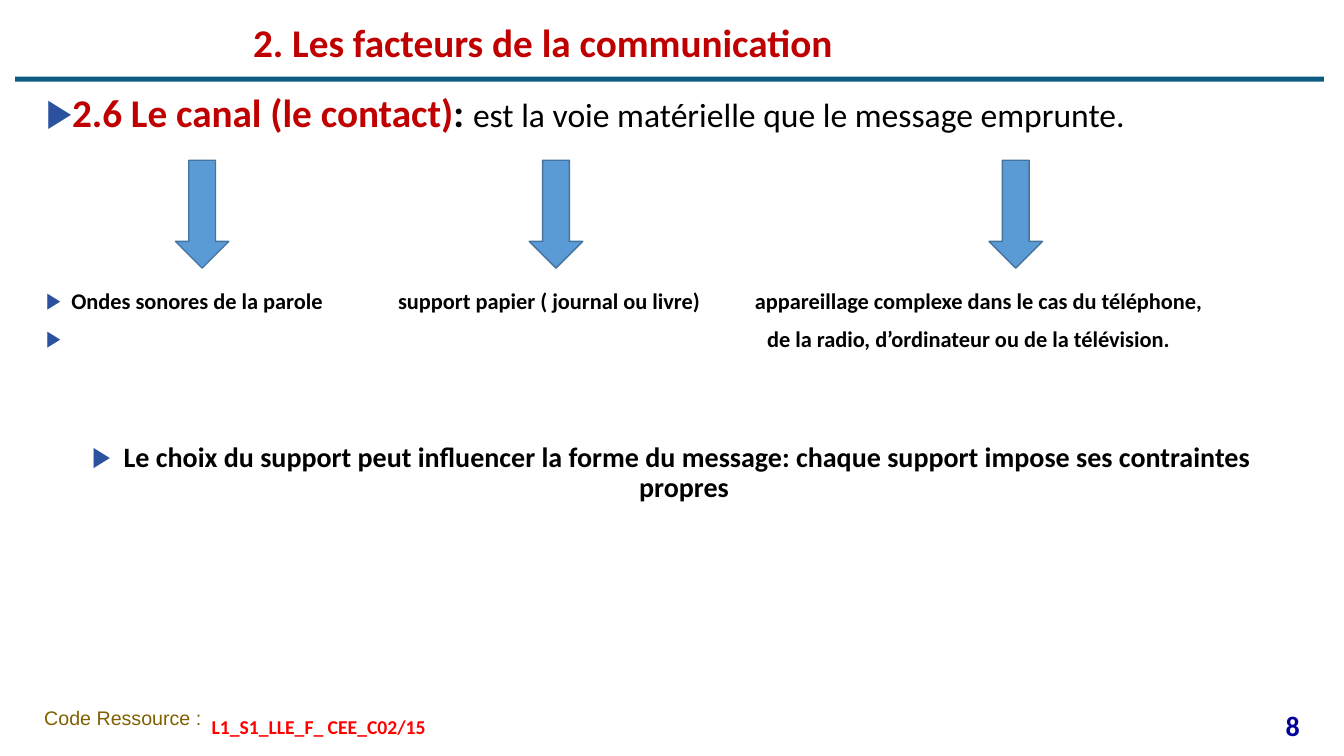
from dataclasses import dataclass

from lxml import etree
from pptx import Presentation
from pptx.dml.color import RGBColor
from pptx.enum.shapes import MSO_SHAPE as SHAPE
from pptx.enum.text import MSO_ANCHOR as ANCHOR, PP_ALIGN as ALIGN
from pptx.oxml.ns import qn
from pptx.util import Inches, Pt


@dataclass(frozen=True)
class Theme:
    font: str = "Calibri"
    label_font: str = "Arial"
    rule: str = "0C5C81"
    heading: str = "C00000"
    text: str = "000000"
    bullet: str = "2B519F"
    arrow: str = "5B9BD5"
    arrow_line: str = "43739E"
    label: str = "806000"
    code: str = "FF0000"
    number: str = "000099"
    title_size: int = 28
    lead_size: int = 24
    remark_size: int = 20
    media_size: int = 16
    footer_size: int = 14


def add_run(p, text, size, color, bold=True, font=Theme.font):
    r = p.add_run()
    r.text = text
    r.font.name = font
    r.font.size = Pt(size)
    r.font.bold = bold
    r.font.color.rgb = RGBColor.from_string(color)
    return r


class SlideBuilder:
    def __init__(self, prs, theme):
        self.theme = theme
        self.slide = prs.slides.add_slide(prs.slide_layouts[5])

    def frame(self, sp, anchor):
        tf = sp.text_frame
        tf.word_wrap = True
        tf.vertical_anchor = anchor
        return tf

    def title(self, text, x, y, w, h, indent):
        sp = self.slide.shapes.title
        sp.left, sp.top, sp.width, sp.height = map(Inches, (x, y, w, h))
        tf = self.frame(sp, ANCHOR.MIDDLE)
        tf.margin_left = Inches(indent)
        p = tf.paragraphs[0]
        p.alignment = ALIGN.LEFT
        p.line_spacing = 0.9
        add_run(p, text, self.theme.title_size, self.theme.heading)

    def text_box(self, x, y, w, h, anchor=ANCHOR.MIDDLE):
        sp = self.slide.shapes.add_textbox(*map(Inches, (x, y, w, h)))
        return self.frame(sp, anchor)

    def label(self, text, x, y, w, h, align=ALIGN.LEFT, **fmt):
        p = self.text_box(x, y, w, h).paragraphs[0]
        p.alignment = align
        add_run(p, text, **fmt)

    def shape(self, kind, x, y, w, h, fill, line=None):
        sp = self.slide.shapes.add_shape(kind, *map(Inches, (x, y, w, h)))
        sp.shadow.inherit = False
        sp.fill.solid()
        sp.fill.fore_color.rgb = RGBColor.from_string(fill)
        if line:
            sp.line.color.rgb = RGBColor.from_string(line)
            sp.line.width = Pt(1)
        else:
            sp.line.fill.background()

    def bullet(self, p, before=10, hang=0.25, tabs=()):
        p.line_spacing = 0.9
        p.space_before = Pt(before)
        pPr = p._p.get_or_add_pPr()
        pPr.set("marL", str(Inches(hang)))
        pPr.set("indent", str(-Inches(hang)))
        color = etree.SubElement(pPr, qn("a:buClr"))
        etree.SubElement(color, qn("a:srgbClr"), val=self.theme.bullet)
        etree.SubElement(pPr, qn("a:buFont"), typeface="Arial")
        etree.SubElement(pPr, qn("a:buChar"), char="▶")
        if tabs:
            stops = etree.SubElement(pPr, qn("a:tabLst"))
            for tab in tabs:
                etree.SubElement(stops, qn("a:tab"), pos=str(Inches(tab)), algn="l")
        return p


def main():
    prs = Presentation()
    prs.slide_width, prs.slide_height = Inches(13.33), Inches(7.5)
    theme = Theme()
    page = SlideBuilder(prs, theme)

    # Title and rule
    page.shape(SHAPE.RECTANGLE, 0.15, 0.76, 12.98, 0.05, theme.rule)
    page.title("2. Les facteurs de la communication", 0.39, 0.2, 12.59, 0.49, indent=2.12)

    # Definition of the channel
    tf = page.text_box(0.36, 0.88, 12.6, 5.85, ANCHOR.TOP)
    p = page.bullet(tf.paragraphs[0])
    add_run(p, "2.6 Le canal (le contact)", theme.title_size, theme.heading)
    add_run(p, ": ", theme.title_size, theme.text)
    add_run(p, "est la voie matérielle que le message emprunte.",
            theme.lead_size, theme.text, bold=False)

    # Three media in columns, the last one on two lines
    media = ("Ondes sonores de la parole", "support papier ( journal ou livre)",
             "appareillage complexe dans le cas du téléphone,")
    p = page.bullet(tf.add_paragraph(), before=110, tabs=(3.49, 7.03))
    add_run(p, "\t".join(media), theme.media_size, theme.text)
    p = page.bullet(tf.add_paragraph(), hang=7.15)
    add_run(p, "de la radio, d’ordinateur ou de la télévision.", theme.media_size, theme.text)

    # Closing remark
    p = page.bullet(tf.add_paragraph(), before=65)
    p.alignment = ALIGN.CENTER
    add_run(p, " Le choix du support peut influencer la forme du message: "
               "chaque support impose ses contraintes propres",
            theme.remark_size, theme.text)

    # Arrows down to the media
    for x in (1.74, 5.25, 9.81):
        page.shape(SHAPE.DOWN_ARROW, x, 1.59, 0.53, 1.07, theme.arrow, theme.arrow_line)

    # Footer
    page.label("Code Ressource :", 0.34, 6.92, 1.77, 0.39, size=theme.footer_size,
               color=theme.label, bold=False, font=theme.label_font)
    page.label("L1_S1_LLE_F_ CEE_C02/15", 2, 7.01, 5.91, 0.39,
               size=theme.footer_size, color=theme.code)
    page.label("8", 12.2, 7, 0.79, 0.39, ALIGN.RIGHT,
               size=theme.remark_size, color=theme.number)

    prs.save("out.pptx")


if __name__ == "__main__":
    main()
